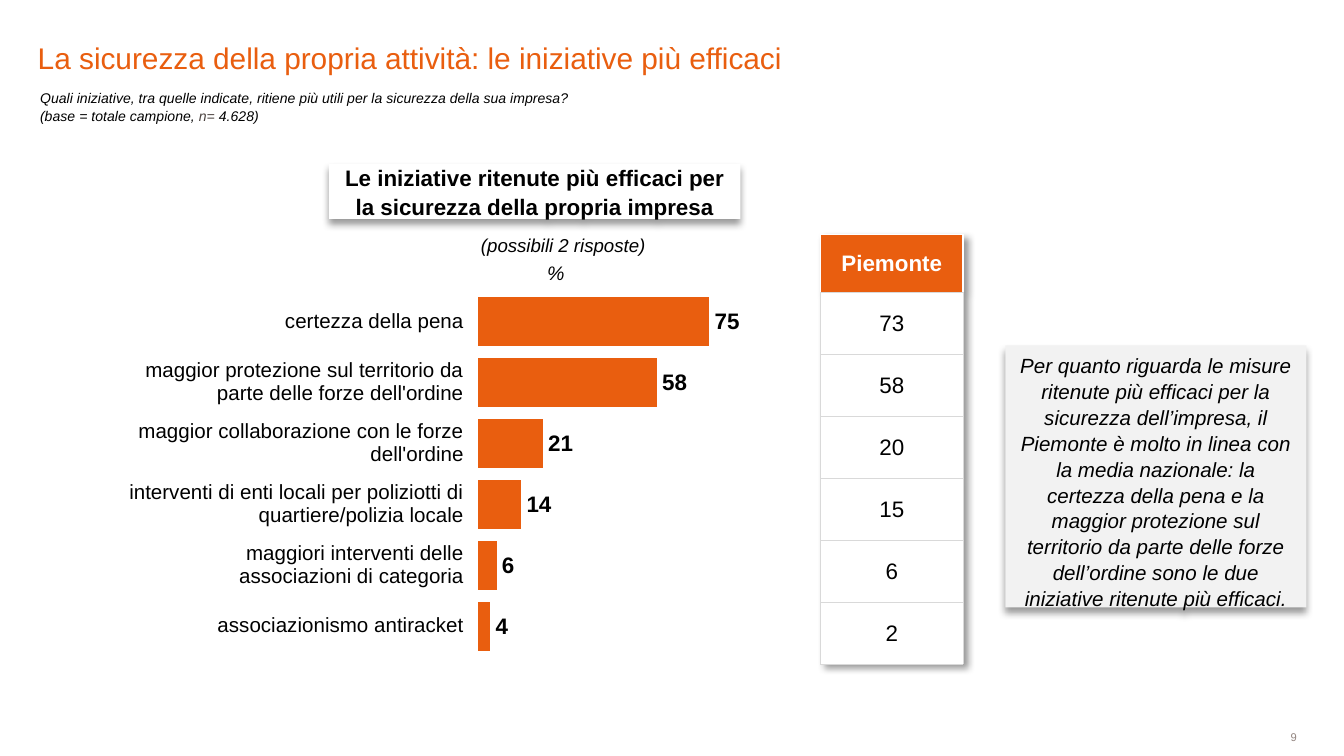
from dataclasses import dataclass, field
from typing import Any

import lxml.etree
import pptx
import pptx.chart.data
import pptx.dml.color
import pptx.enum.chart
import pptx.enum.shapes
import pptx.enum.text
import pptx.oxml
import pptx.oxml.ns
import pptx.util

Pt = pptx.util.Pt
ALIGN = pptx.enum.text.PP_ALIGN
ANCHOR = pptx.enum.text.MSO_ANCHOR
qn = pptx.oxml.ns.qn

COLORS = {
    "orange": "E95E0F", "black": "000000", "white": "FFFFFF", "panel": "F2F2F2",
    "rule": "D9D9D9", "page": "928580", "base": "4A423F",
}
FONT = "Arial"
ROW_HEIGHT = 32.6
CELL_MARGIN = 0.7


@dataclass
class Run:
    text: str
    color: str = "black"


@dataclass
class Block:
    """Text with its place; box is left, top, width, height in points."""
    box: tuple[float, float, float, float]
    lines: list[list[Run]]
    size: float
    align: Any = ALIGN.CENTER
    anchor: Any = ANCHOR.TOP
    margins: tuple[float, float] = (7.2, 3.6)
    spacing: float = 1.05
    style: dict[str, bool] = field(default_factory=dict)
    fill: str = ""


@dataclass
class Initiative:
    label: str
    national: int
    piemonte: int


INITIATIVES = [
    Initiative("certezza della pena", 75, 73),
    Initiative("maggior protezione sul territorio da parte delle forze dell'ordine", 58, 58),
    Initiative("maggior collaborazione con le forze dell'ordine", 21, 20),
    Initiative("interventi di enti locali per poliziotti di quartiere/polizia locale", 14, 15),
    Initiative("maggiori interventi delle\vassociazioni di categoria", 6, 6),
    Initiative("associazionismo antiracket", 4, 2),
]

TITLE = Block((20.2, 13.7, 589.7, 26.6),
              [[Run("La sicurezza della propria attività: le iniziative più efficaci", "orange")]],
              16, ALIGN.LEFT, ANCHOR.BOTTOM, (0, 0), 1.0)

BLOCKS = [
    Block((14.4, 43.9, 501.8, 25.2),
          [[Run("Quali iniziative, tra quelle indicate, ritiene più utili per la sicurezza della sua impresa?")],
           [Run("(base = totale campione, "), Run("n=", "base"), Run(" 4.628)")]],
          7.5, ALIGN.LEFT, style={"italic": True}),
    Block((176.4, 87.8, 220.3, 29.5),
          [[Run("Le iniziative ritenute più efficaci per la sicurezza della propria impresa")]],
          12, anchor=ANCHOR.MIDDLE, style={"bold": True}, fill="white"),
    Block((200.9, 121, 201.6, 19.4), [[Run("(possibili 2 risposte)")]],
          10, style={"italic": True}),
    Block((287.3, 139, 20.9, 13), [[Run("%")]], 10.5, anchor=ANCHOR.MIDDLE,
          margins=(0, 0), style={"italic": True}),
    Block((538.6, 185, 161.3, 140.4),
          [[Run("Per quanto riguarda le misure ritenute più efficaci per la sicurezza dell’impresa, "
                "il Piemonte è molto in linea con la media nazionale: la certezza della pena e la "
                "maggior protezione sul territorio da parte delle forze dell’ordine sono le due "
                "iniziative ritenute più efficaci.")]],
          11, style={"italic": True}, fill="panel"),
    Block((598.3, 391.7, 96.5, 6.5), [[Run("9", "page")]], 6, ALIGN.RIGHT,
          ANCHOR.MIDDLE, (0, 0), 1.0),
]


def rgb(name: str) -> pptx.dml.color.RGBColor:
    return pptx.dml.color.RGBColor.from_string(COLORS[name])


def apply(target: Any, formats: dict[str, Any]) -> None:
    for name, value in formats.items():
        setattr(target, name, value)


def set_font(font: Any, size: float, color: str = "black", **style: bool) -> None:
    apply(font, {"name": FONT, "size": Pt(size), "bold": False, "italic": False, **style})
    font.color.rgb = rgb(color)


def shadow_effect(direction: int) -> Any:
    return pptx.oxml.parse_xml(
        f'<a:effectLst {pptx.oxml.ns.nsdecls("a")}><a:outerShdw blurRad="{Pt(4)}" '
        f'dist="{Pt(3)}" dir="{direction * 60000}" algn="t" rotWithShape="0">'
        f'<a:srgbClr val="{COLORS["black"]}"><a:alpha val="40000"/></a:srgbClr>'
        '</a:outerShdw></a:effectLst>')


def write_block(shape: Any, block: Block) -> None:
    apply(shape, dict(zip(("left", "top", "width", "height"), map(Pt, block.box))))
    frame = shape.text_frame
    side, end = map(Pt, block.margins)
    apply(frame, {"word_wrap": True, "auto_size": pptx.enum.text.MSO_AUTO_SIZE.NONE,
                  "vertical_anchor": block.anchor, "margin_left": side,
                  "margin_right": side, "margin_top": end, "margin_bottom": end})
    for index, runs in enumerate(block.lines):
        paragraph = frame.add_paragraph() if index else frame.paragraphs[0]
        apply(paragraph, {"alignment": block.align, "line_spacing": block.spacing})
        for part in runs:
            run = paragraph.add_run()
            run.text = part.text
            set_font(run.font, block.size, part.color, **block.style)


def add_block(slide: Any, block: Block) -> None:
    box = tuple(map(Pt, block.box))
    if not block.fill:
        write_block(slide.shapes.add_textbox(*box), block)
        return
    panel = slide.shapes.add_shape(pptx.enum.shapes.MSO_SHAPE.RECTANGLE, *box)
    panel.fill.solid()
    panel.fill.fore_color.rgb = rgb(block.fill)
    panel.line.fill.background()
    panel._element.spPr.append(shadow_effect(90))
    write_block(panel, block)


def add_column(slide: Any, left: float, top: float, width: float, heights: list[float]) -> Any:
    """Add a one-column table without style bands."""
    table = slide.shapes.add_table(len(heights), 1, Pt(left), Pt(top), Pt(width),
                                   Pt(sum(heights))).table
    apply(table, {"first_row": False, "horz_banding": False})
    for row, height in zip(table.rows, heights):
        row.height = Pt(height)
    return table


def write_cell(cell: Any, text: str, size: float, align: Any, color: str = "black",
               fill: str = "", bold: bool = False) -> None:
    apply(cell, {"vertical_anchor": ANCHOR.MIDDLE, "margin_left": Pt(CELL_MARGIN),
                 "margin_right": Pt(CELL_MARGIN), "margin_top": Pt(CELL_MARGIN), "margin_bottom": 0})
    cell.text_frame.text = text
    paragraph = cell.text_frame.paragraphs[0]
    paragraph.alignment = align
    for run in paragraph.runs:
        set_font(run.font, size, color, bold=bold)
    if fill:
        cell.fill.solid()
        cell.fill.fore_color.rgb = rgb(fill)
    else:
        cell.fill.background()


def set_borders(cell: Any, borders: dict[str, tuple[str, float]]) -> None:
    properties = cell._tc.get_or_add_tcPr()
    for index, (side, (color, width)) in enumerate(borders.items()):
        properties.insert(index, pptx.oxml.parse_xml(
            f'<a:ln{side} {pptx.oxml.ns.nsdecls("a")} w="{Pt(width)}"><a:solidFill>'
            f'<a:srgbClr val="{COLORS[color]}"/></a:solidFill></a:ln{side}>'))


def add_labels(slide: Any) -> None:
    table = add_column(slide, 59, 155.5, 190.1, [ROW_HEIGHT] * len(INITIATIVES))
    for index, item in enumerate(INITIATIVES):
        write_cell(table.cell(index, 0), item.label, 11, ALIGN.RIGHT)


def add_piemonte(slide: Any) -> None:
    table = add_column(slide, 439.5, 125.6, 76.5, [31] + [33.2] * len(INITIATIVES))
    table._tbl.tblPr.insert(0, shadow_effect(45))
    thin, thick = ("rule", 0.25), ("white", 1)
    write_cell(table.cell(0, 0), "Piemonte", 12, ALIGN.CENTER, "white", "orange", True)
    set_borders(table.cell(0, 0), {"L": thick, "R": thick, "T": thick, "B": thin})
    for index, item in enumerate(INITIATIVES, 1):
        cell = table.cell(index, 0)
        write_cell(cell, str(item.piemonte), 12, ALIGN.CENTER, fill="white")
        set_borders(cell, dict.fromkeys("LRTB", thin))


def add_bars(slide: Any) -> None:
    data = pptx.chart.data.CategoryChartData(number_format="0")
    data.categories = [str(number) for number in range(1, len(INITIATIVES) + 1)]
    data.add_series("Series 1", [item.national for item in INITIATIVES])
    chart = slide.shapes.add_chart(pptx.enum.chart.XL_CHART_TYPE.BAR_CLUSTERED, Pt(190), Pt(154),
                                   Pt(330.5), Pt(202.3), data).chart
    apply(chart, {"has_legend": False, "has_title": False})
    set_font(chart.font, 13.5)
    apply(chart.category_axis, {"visible": False, "reverse_order": True})
    apply(chart.value_axis, {"visible": False, "has_major_gridlines": False, "minimum_scale": 0,
                             "maximum_scale": 100, "major_unit": 10})
    plot = chart.plots[0]
    apply(plot, {"gap_width": 24, "vary_by_categories": False, "has_data_labels": True})
    apply(plot.data_labels, {"show_value": True, "number_format": "0",
                             "number_format_is_linked": False,
                             "position": pptx.enum.chart.XL_LABEL_POSITION.OUTSIDE_END})
    set_font(plot.data_labels.font, 12, bold=True)
    bars = plot.series[0].format.fill
    bars.solid()
    bars.fore_color.rgb = rgb("orange")
    area = chart._chartSpace.chart.plotArea
    for old in area.findall(qn("c:layout")):
        area.remove(old)
    layout = lxml.etree.Element(qn("c:layout"))
    manual = lxml.etree.SubElement(layout, qn("c:manualLayout"))
    for tag, value in {"layoutTarget": "inner", "xMode": "edge", "yMode": "edge", "x": "0.2",
                       "y": "0.01", "w": "0.5", "h": "0.97"}.items():
        lxml.etree.SubElement(manual, qn(f"c:{tag}")).set("val", value)
    area.insert(0, layout)


def main() -> None:
    deck = pptx.Presentation()
    apply(deck, {"slide_width": Pt(720), "slide_height": Pt(405)})
    slide = deck.slides.add_slide(deck.slide_layouts.get_by_name("Title Only"))
    write_block(slide.shapes.title, TITLE)
    add_bars(slide)
    add_labels(slide)
    add_piemonte(slide)
    for block in BLOCKS:
        add_block(slide, block)
    deck.save("out.pptx")


if __name__ == "__main__":
    main()
